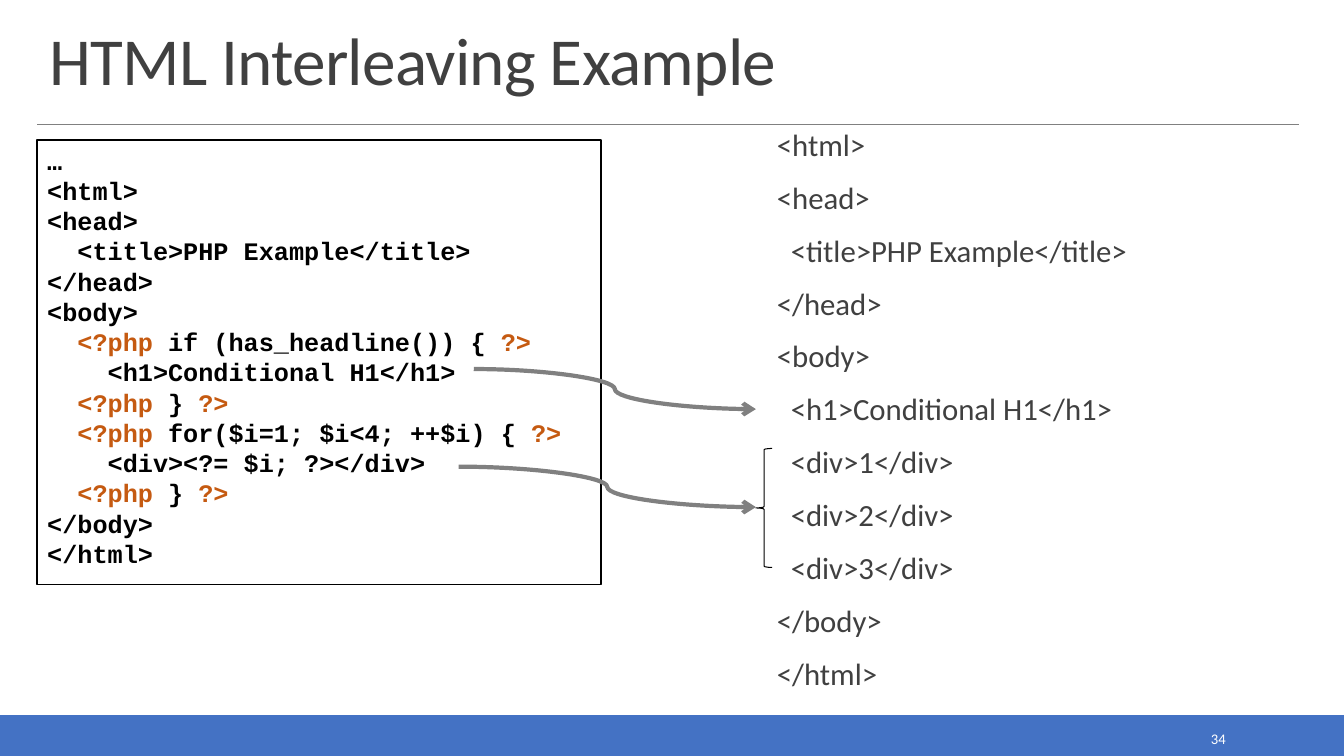
from lxml.etree import SubElement
from pptx import Presentation
from pptx.dml.color import RGBColor
from pptx.enum.shapes import MSO_CONNECTOR as Connector, MSO_SHAPE as Shape
from pptx.enum.text import MSO_ANCHOR as Anchor, PP_ALIGN as Align
from pptx.oxml.ns import qn
from pptx.util import Cm, Pt

BLUE, GREY, DARK = "4472C4", "808080", "404040"
BLACK, WHITE, ORANGE = "000000", "FFFFFF", "C55A11"


def color(hex_string):
    return RGBColor.from_string(hex_string)


def php(code):
    """Segments of an indented line wrapped in PHP tags."""
    return [("  ", BLACK), ("<?php ", ORANGE), (code + " ", BLACK), ("?>", ORANGE)]


def html(code):
    return [(code, BLACK)]


class SlideBuilder:
    body_font = "Calibri"
    code_font = "Courier New"

    def __init__(self, slide):
        self.slide = slide

    def shape(self, kind, left, top, width, height, fill=None, line=BLACK, weight=1.25):
        shape = self.slide.shapes.add_shape(
            kind, Cm(left), Cm(top), Cm(width), Cm(height))
        shape.shadow.inherit = False
        if fill:
            shape.fill.solid()
            shape.fill.fore_color.rgb = color(fill)
        else:
            shape.fill.background()
        shape.line.color.rgb = color(line)
        shape.line.width = Pt(weight)
        return shape

    def text(self, lines, left, top, width, height, size, ink=DARK,
             anchor=Anchor.TOP, align=Align.LEFT, spacing=1.0, before=0, after=0,
             tracking=None):
        box = self.slide.shapes.add_textbox(Cm(left), Cm(top), Cm(width), Cm(height))
        frame = box.text_frame
        frame.word_wrap = True
        frame.vertical_anchor = anchor
        frame.text = "\n".join(lines)
        for number, paragraph in enumerate(frame.paragraphs):
            paragraph.alignment = align
            paragraph.line_spacing = spacing
            paragraph.space_before = Pt(before if number else 0)
            paragraph.space_after = Pt(after)
            for run in paragraph.runs:
                self.style(run, self.body_font, size, ink)
                if tracking:
                    run.font._element.set("spc", str(tracking))

    def code(self, lines, left, top, width, height, size):
        frame = self.shape(Shape.RECTANGLE, left, top, width, height).text_frame
        frame.word_wrap = True
        frame.vertical_anchor = Anchor.TOP
        for number, segments in enumerate(lines):
            paragraph = frame.add_paragraph() if number else frame.paragraphs[0]
            paragraph.alignment = Align.LEFT
            for words, ink in segments:
                run = paragraph.add_run()
                run.text = words
                self.style(run, self.code_font, size, ink, bold=True)

    def line(self, kind, start, end, weight, arrow=False):
        connector = self.slide.shapes.add_connector(
            kind, *(Cm(value) for value in start + end))
        connector.line.color.rgb = color(GREY)
        connector.line.width = Pt(weight)
        if arrow:
            SubElement(connector.line._get_or_add_ln(), qn("a:tailEnd"), type="arrow")
        SubElement(connector._element.spPr, qn("a:effectLst"))

    @staticmethod
    def style(run, font, size, ink, bold=False):
        run.font.name = font
        run.font.size = Pt(size)
        run.font.bold = bold
        run.font.color.rgb = color(ink)


SOURCE = [
    html("…"),
    html("<html>"),
    html("<head>"),
    html("  <title>PHP Example</title>"),
    html("</head>"),
    html("<body>"),
    php("if (has_headline()) {"),
    html("    <h1>Conditional H1</h1>"),
    php("}"),
    php("for($i=1; $i<4; ++$i) {"),
    html("    <div><?= $i; ?></div>"),
    php("}"),
    html("</body>"),
    html("</html>"),
]
OUTPUT = [
    "<html>", "<head>", "  <title>PHP Example</title>", "</head>", "<body>",
    "  <h1>Conditional H1</h1>",
    *(f"  <div>{number}</div>" for number in range(1, 4)),
    "</body>", "</html>",
]


def main():
    presentation = Presentation()
    presentation.slide_width, presentation.slide_height = Cm(33.87), Cm(19.05)
    builder = SlideBuilder(presentation.slides.add_slide(presentation.slide_layouts[6]))

    # Footer band and title rule
    builder.shape(Shape.RECTANGLE, 0, 18.03, 33.87, 1.02, fill=BLUE, line=BLUE)
    builder.line(Connector.STRAIGHT, (0.94, 3.13), (32.74, 3.13), 0.5)

    # Title and slide number
    builder.text(["HTML Interleaving Example"], 0.99, 0.49, 31.8, 2.13, 48,
                 anchor=Anchor.BOTTOM, spacing=0.85, tracking=-50)
    builder.text(["34"], 27.51, 18.26, 3.63, 0.71, 10.5, ink=WHITE,
                 anchor=Anchor.MIDDLE, align=Align.RIGHT)

    # PHP source and the HTML it produces
    builder.code(SOURCE, 0.94, 3.53, 14.2, 11.2, 18)
    builder.text(OUTPUT, 19.33, 3.15, 13.06, 14.4, 22,
                 spacing=0.9, before=12, after=2)

    # Arrows from source lines to output lines
    for start, end in (((11.94, 9.3), (19.05, 10.31)), ((11.56, 11.76), (19.05, 12.78))):
        builder.line(Connector.CURVE, start, end, 3, arrow=True)

    # Brace around the loop output
    brace = builder.shape(Shape.LEFT_BRACE, 19.05, 11.3, 0.41, 3, weight=0.75)
    brace.adjustments[0] = 0.083

    presentation.save("out.pptx")


if __name__ == "__main__":
    main()
